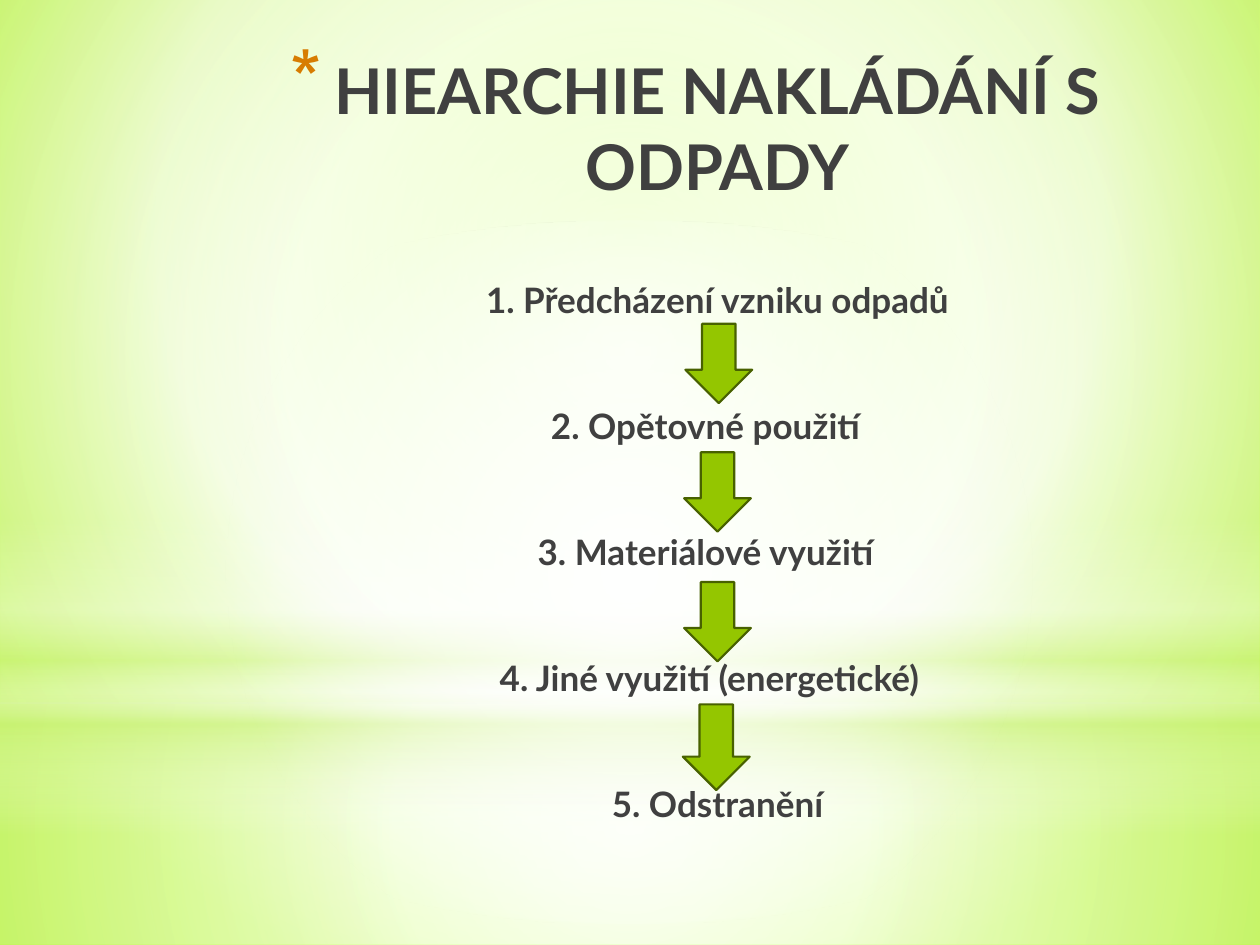
from lxml import etree
from pptx import Presentation
from pptx.dml.color import RGBColor
from pptx.enum.shapes import MSO_SHAPE
from pptx.enum.text import MSO_ANCHOR, MSO_AUTO_SIZE, PP_ALIGN
from pptx.oxml.ns import qn
from pptx.util import Inches, Pt

RECTANGLE, ELLIPSE, DOWN_ARROW = MSO_SHAPE.RECTANGLE, MSO_SHAPE.OVAL, MSO_SHAPE.DOWN_ARROW
CENTER, TOP, NO_FIT = PP_ALIGN.CENTER, MSO_ANCHOR.TOP, MSO_AUTO_SIZE.NONE

TEXT = RGBColor(0x40, 0x40, 0x40)
BULLET = RGBColor(0xD7, 0x7C, 0x01)
ARROW_FILL = RGBColor(0x94, 0xC6, 0x00)
ARROW_LINE = RGBColor(0x48, 0x61, 0x00)
WHITE = RGBColor(0xFF, 0xFF, 0xFF)
LIME = RGBColor(0xCA, 0xF2, 0x78)
BRIGHT_LIME = RGBColor(0xCA, 0xFF, 0x60)
PALE_LIME = RGBColor(0xF7, 0xFF, 0xE7)
DEEP_LIME = RGBColor(0xB7, 0xFF, 0x29)

MIDDLE = (50, 50, 50, 50)


def add_child(parent, tag, **attributes):
    values = {name: str(value) for name, value in attributes.items()}
    return etree.SubElement(parent, qn(tag), values)


def set_gradient(holder, stops, focus=None, angle=90):
    """Swap a solid fill for a gradient of (position, colour, opacity) stops."""
    gradient = etree.Element(qn("a:gradFill"), rotWithShape="1")
    stop_list = add_child(gradient, "a:gsLst")
    for position, color, opacity in stops:
        stop = add_child(stop_list, "a:gs", pos=position * 1000)
        color_node = add_child(stop, "a:srgbClr", val=color)
        if opacity < 100:
            add_child(color_node, "a:alpha", val=opacity * 1000)
    if focus:
        circle = add_child(gradient, "a:path", path="circle")
        sides = {side: value * 1000 for side, value in zip("ltrb", focus)}
        add_child(circle, "a:fillToRect", **sides)
    else:
        add_child(gradient, "a:lin", ang=angle * 60000, scaled=0)
    holder.replace(holder.find(qn("a:solidFill")), gradient)


def write_text(para, text, size=20, bold=True, color=TEXT, font="Lato",
               before=0, left=0.35, hanging=0):
    para.alignment = CENTER
    para.space_before = Pt(before)
    properties = para._p.get_or_add_pPr()
    properties.set("marL", str(Inches(left)))
    properties.set("indent", str(-Inches(hanging)))
    span = para.add_run()
    span.text = text
    span.font.size = Pt(size)
    span.font.bold = bold
    span.font.name = font
    span.font.color.rgb = color


class SlideBuilder:
    def __init__(self, deck):
        self.page = deck.slides.add_slide(deck.slide_layouts[5])

    def background(self, stops, focus):
        self.page.background.fill.solid()
        set_gradient(self.page._element.find(".//" + qn("p:bgPr")), stops, focus)

    def shape(self, kind, left, top, width, height, fill=WHITE):
        shape = self.page.shapes.add_shape(
            kind, Inches(left), Inches(top), Inches(width), Inches(height))
        shape.shadow.inherit = False
        shape.fill.solid()
        shape.fill.fore_color.rgb = fill
        return shape

    def glow(self, kind, top, height, stops, focus=None):
        shape = self.shape(kind, 0, top, 10, height)
        shape.line.fill.background()
        set_gradient(shape._element.spPr, stops, focus)

    def arrow(self, left, top, height):
        shape = self.shape(DOWN_ARROW, left, top, 0.53, height, ARROW_FILL)
        shape.line.color.rgb = ARROW_LINE
        shape.line.width = Pt(1.25)

    def title(self, heading, steps):
        box = self.page.shapes.title
        self.page.shapes._spTree.append(box._element)  # in front of the glows
        box.left, box.top = Inches(1.96), Inches(0.36)
        box.width, box.height = Inches(7.12), Inches(6.61)
        frame = box.text_frame
        frame.word_wrap = True
        frame.auto_size = NO_FIT
        frame.vertical_anchor = TOP

        para = frame.paragraphs[0]
        write_text(para, heading, size=36, hanging=0.35)
        properties = para._p.get_or_add_pPr()
        add_child(add_child(properties, "a:buClr"), "a:srgbClr", val=BULLET)
        add_child(properties, "a:buSzPct", val=128000)
        add_child(properties, "a:buChar", char="*")

        for number, (step, left) in enumerate(steps, 1):
            write_text(frame.add_paragraph(), f"{number}. {step}",
                       before=43 if number == 1 else 48, left=left)


def main():
    deck = Presentation()
    deck.slide_width, deck.slide_height = Inches(10), Inches(7.5)
    builder = SlideBuilder(deck)

    # Backdrop
    builder.background([(0, BRIGHT_LIME, 100), (60, PALE_LIME, 100),
                        (100, DEEP_LIME, 100)], (20, 10, 20, 60))
    builder.glow(RECTANGLE, 5.58, 1.92,
                 [(0, WHITE, 91), (37, WHITE, 76), (100, LIME, 79)], MIDDLE)
    builder.glow(RECTANGLE, 0, 5.58,
                 [(0, WHITE, 89), (48, WHITE, 62), (100, LIME, 79)], MIDDLE)
    builder.glow(RECTANGLE, 4.12, 2.5,
                 [(0, WHITE, 0), (29, WHITE, 30), (45, LIME, 40),
                  (55, WHITE, 26), (65, LIME, 60), (100, WHITE, 0)])
    builder.glow(ELLIPSE, 1.75, 5.58, [(0, WHITE, 100), (56, WHITE, 0)], MIDDLE)

    # Heading and steps, each step with its left margin
    builder.title("HIEARCHIE NAKLÁDÁNÍ S ODPADY", [
        ("Předcházení vzniku odpadů", 0.35),
        ("Opětovné použití", 0.16),
        ("Materiálové využití", 0.16),
        ("Jiné využití (energetické)", 0.22),
        ("Odstranění", 0.35),
    ])

    # Arrows between the steps
    for left, top, height in [(5.44, 2.57, 0.63), (5.43, 3.59, 0.63),
                              (5.43, 4.62, 0.63), (5.42, 5.59, 0.68)]:
        builder.arrow(left, top, height)

    deck.save("out.pptx")


if __name__ == "__main__":
    main()
